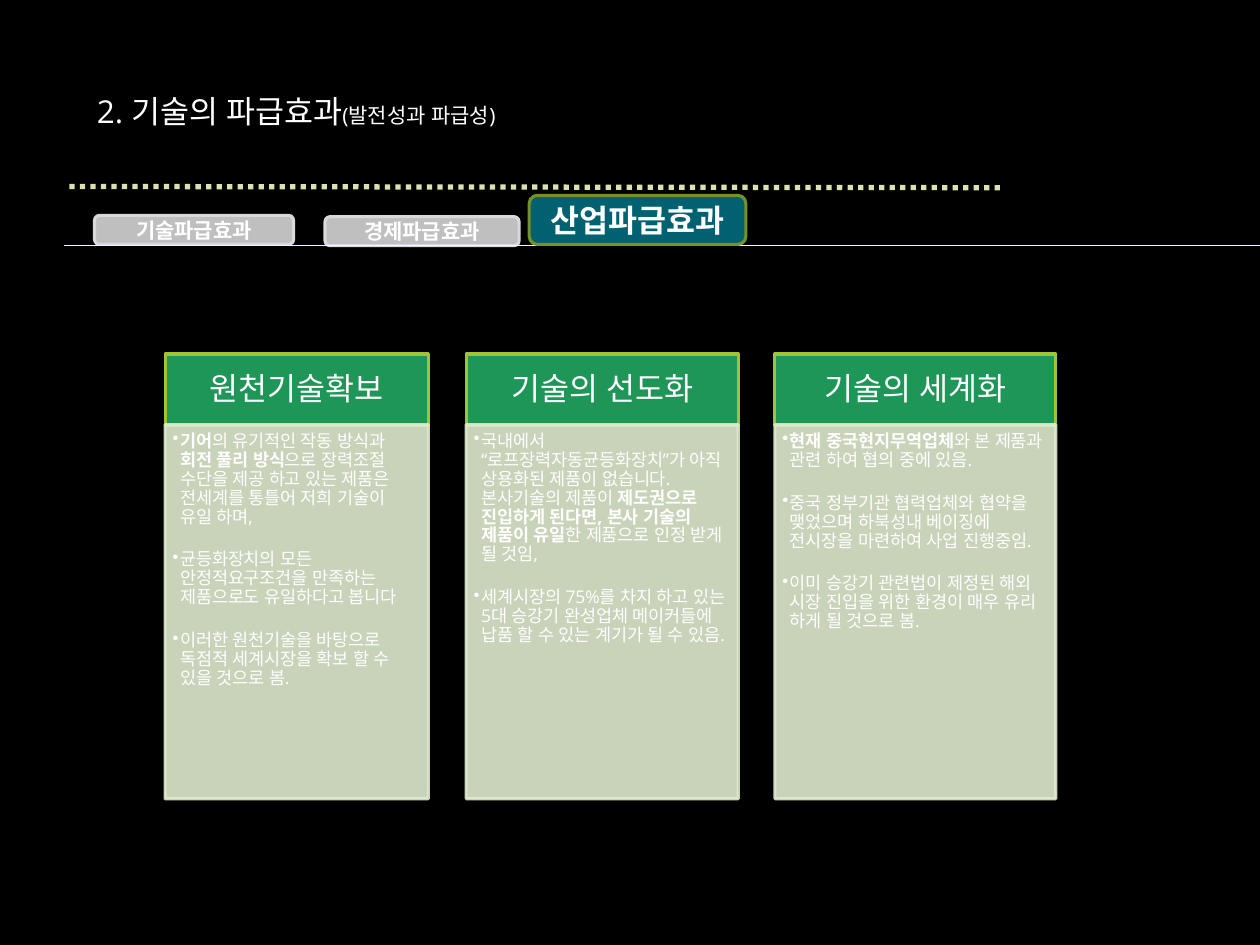
from dataclasses import dataclass

from lxml import etree
from pptx import Presentation
from pptx.dml.color import RGBColor
from pptx.enum import dml, shapes, text
from pptx.oxml import ns
from pptx.util import Inches, Pt

BODY_FONT = "Open Sans"
TAB_FONT = "Noto Sans CJK KR"
WHITE = "FFFFFF"
HEAD_TOP, HEAD_HEIGHT = 2.81, 0.57
BODY_TOP, BODY_HEIGHT = 3.37, 2.97


@dataclass
class Tab:
    label: str
    left: float
    top: float
    width: float
    height: float = 0.23
    fill: str = "BFBFBF"
    border: str = "D9D9D9"
    size: int = 12


@dataclass
class Column:
    """One card; in each point, the odd-numbered pieces are bold."""
    heading: str
    left: float
    width: float
    points: list[list[str]]


INACTIVE_TABS = [
    Tab("경제파급효과", 2.58, 1.72, 1.54),
    Tab("기술파급효과", 0.75, 1.71, 1.58),
]
ACTIVE_TAB = Tab("산업파급효과", 4.2, 1.55, 1.72, 0.39, "006270", "769127", 18)

COLUMNS = [
    Column("원천기술확보", 1.31, 2.09, [
        ["", "기어", "의 유기적인 작동 방식과 ", "회전 풀리 방식",
         "으로 장력조절 수단을 제공 하고 있는 제품은 전세계를 통틀어 저희 기술이 유일 하며,"],
        ["균등화장치의 모든 안정적요구조건을 만족하는 제품으로도 유일하다고 봅니다"],
        ["이러한 원천기술을 바탕으로 독점적 세계시장을 확보 할 수 있을 것으로 봄."],
    ]),
    Column("기술의 선도화", 3.7, 2.16, [
        ["국내에서 “로프장력자동균등화장치”가 아직 상용화된 제품이 없습니다. 본사기술의 제품이 ",
         "제도권으로 진입하게 된다면, 본사 기술의 제품이 유일",
         "한 제품으로 인정 받게 될 것임,"],
        ["세계시장의 75%를 차지 하고 있는 5대 승강기 완성업체 메이커들에 납품 할 수 있는 "
         "계기가 될 수 있음."],
    ]),
    Column("기술의 세계화", 6.15, 2.23, [
        ["", "현재 중국현지무역업체", "와 본 제품과 관련 하여 협의 중에 있음."],
        ["중국 정부기관 협력업체와 협약을 맺었으며 하북성내 베이징에 전시장을 마련하여 사업 진행중임."],
        ["이미 승강기 관련법이 제정된 해외 시장 진입을 위한 환경이 매우 유리 하게 될 것으로 봄."],
    ]),
]


def color(hex_value: str) -> RGBColor:
    return RGBColor.from_string(hex_value)


def style_run(run, size: float, font: str, bold: bool = False) -> None:
    run.font.size = Pt(size)
    run.font.name = font
    run.font.bold = bold
    run.font.color.rgb = color(WHITE)
    east_asian = etree.SubElement(run.font._element, ns.qn("a:ea"))
    east_asian.set("typeface", font)


def set_margins(frame, left: float, top: float, right: float, bottom: float) -> None:
    frame.margin_left, frame.margin_top = Inches(left), Inches(top)
    frame.margin_right, frame.margin_bottom = Inches(right), Inches(bottom)


def add_panel(slide, kind, left: float, top: float, width: float, height: float,
              fill: str, border: str):
    panel = slide.shapes.add_shape(kind, Inches(left), Inches(top), Inches(width), Inches(height))
    panel.shadow.inherit = False
    panel.fill.solid()
    panel.fill.fore_color.rgb = color(fill)
    panel.line.color.rgb = color(border)
    panel.line.width = Pt(1.75)
    panel.text_frame.word_wrap = True
    return panel


def set_label(panel, label: str, size: float, font: str, bold: bool = False) -> None:
    """Put one centred line of text in a panel."""
    panel.text_frame.text = label
    panel.text_frame.vertical_anchor = text.MSO_ANCHOR.MIDDLE
    paragraph = panel.text_frame.paragraphs[0]
    paragraph.alignment = text.PP_ALIGN.CENTER
    style_run(paragraph.runs[0], size, font, bold)


def add_tab(slide, tab: Tab) -> None:
    panel = add_panel(slide, shapes.MSO_SHAPE.ROUNDED_RECTANGLE, tab.left, tab.top,
                      tab.width, tab.height, tab.fill, tab.border)
    set_label(panel, tab.label, tab.size, TAB_FONT, bold=True)


def add_rule(slide, start: tuple[float, float], end: tuple[float, float],
             hex_value: str, width: float):
    rule = slide.shapes.add_connector(shapes.MSO_CONNECTOR.STRAIGHT,
                                      *map(Inches, start), *map(Inches, end))
    rule.line.color.rgb = color(hex_value)
    rule.line.width = Pt(width)
    etree.SubElement(rule._element.spPr, ns.qn("a:effectLst"))
    return rule


def set_bullet(paragraph) -> None:
    properties = paragraph._p.get_or_add_pPr()
    properties.set("marL", str(Inches(0.06)))
    properties.set("indent", str(Inches(-0.06)))
    etree.SubElement(properties, ns.qn("a:buChar")).set("char", "•")


def add_column(slide, column: Column) -> None:
    head = add_panel(slide, shapes.MSO_SHAPE.RECTANGLE, column.left, HEAD_TOP,
                     column.width, HEAD_HEIGHT, "1E9657", "A0C435")
    set_label(head, column.heading, 18, BODY_FONT)
    head.text_frame.paragraphs[0].line_spacing = 0.9
    set_margins(head.text_frame, 0.14, 0.08, 0.14, 0.08)

    body = add_panel(slide, shapes.MSO_SHAPE.RECTANGLE, column.left, BODY_TOP,
                     column.width, BODY_HEIGHT, "DFEACE", "DFEACE")
    for swatch in body._element.spPr.iter(ns.qn("a:srgbClr")):
        etree.SubElement(swatch, ns.qn("a:alpha")).set("val", "90000")
    frame = body.text_frame
    frame.vertical_anchor = text.MSO_ANCHOR.TOP
    set_margins(frame, 0.06, 0.06, 0.08, 0.09)
    for index, point in enumerate(column.points):
        paragraph = frame.add_paragraph() if index else frame.paragraphs[0]
        set_bullet(paragraph)
        paragraph.alignment = text.PP_ALIGN.LEFT
        paragraph.line_spacing = 0.9
        if index:
            paragraph.space_before = Pt(13.7)
        for position, piece in enumerate(point):
            if piece:
                run = paragraph.add_run()
                run.text = piece
                style_run(run, 10, BODY_FONT, bold=position % 2 == 1)


def add_title(slide) -> None:
    box = slide.shapes.add_textbox(Inches(0.67), Inches(0.68), Inches(3.7), Inches(0.4))
    box.text_frame.word_wrap = True
    paragraph = box.text_frame.paragraphs[0]
    for words, size in (("2. 기술의 파급효과", 18), ("(발전성과 파급성)", 12)):
        run = paragraph.add_run()
        run.text = words
        style_run(run, size, BODY_FONT)


def main() -> None:
    deck = Presentation()
    deck.slide_width, deck.slide_height = Inches(10), Inches(7.5)
    slide = deck.slides.add_slide(deck.slide_layouts[6])
    slide.background.fill.solid()
    slide.background.fill.fore_color.rgb = color("000000")

    dotted = add_rule(slide, (0.55, 1.48), (7.97, 1.49), "DDE0AF", 3)
    dotted.line.dash_style = dml.MSO_LINE.ROUND_DOT
    for column in COLUMNS:
        add_column(slide, column)
    for tab in INACTIVE_TABS:
        add_tab(slide, tab)
    add_rule(slide, (0.51, 1.95), (10, 1.95), "FBFEC6", 0.25)
    add_tab(slide, ACTIVE_TAB)
    add_title(slide)
    deck.save("out.pptx")


if __name__ == "__main__":
    main()
